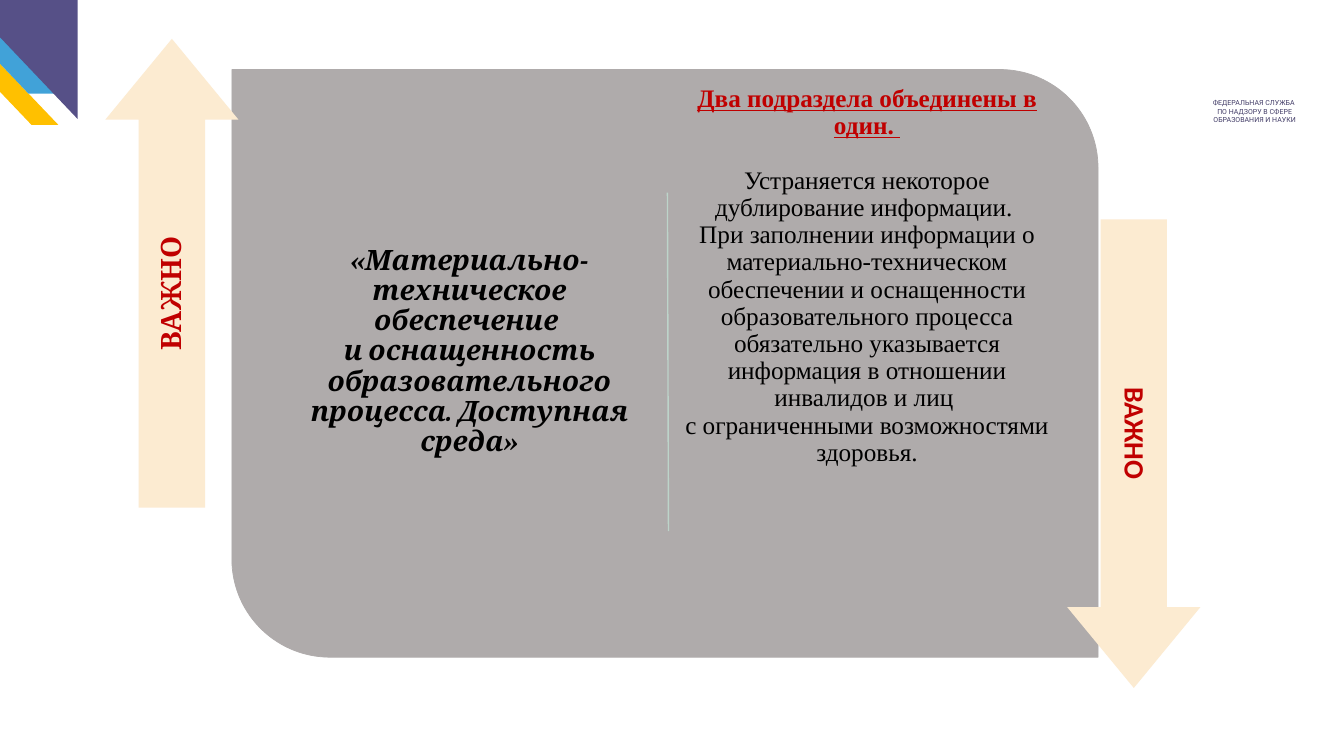
"""Build the slide on the merged subsection between two arrows."""
import pptx
import pptx.util
import pptx.dml.color
import pptx.enum.shapes
import pptx.enum.text
import pptx.oxml.ns
import lxml.etree

Inches = pptx.util.Inches
Pt = pptx.util.Pt
RGBColor = pptx.dml.color.RGBColor
KIND = pptx.enum.shapes.MSO_SHAPE
ANCHOR = pptx.enum.text.MSO_ANCHOR

GOLD = RGBColor(0xFF, 0xC0, 0x00)
SKY = RGBColor(0x41, 0xA2, 0xD8)
PLUM = RGBColor(0x56, 0x50, 0x87)
INK = RGBColor(0x41, 0x3B, 0x66)
GREY = RGBColor(0xAF, 0xAB, 0xAB)
MINT = RGBColor(0xBD, 0xD4, 0xCA)
CREAM = RGBColor(0xFC, 0xEB, 0xD1)
RED = RGBColor(0xC0, 0x00, 0x00)
BLACK = RGBColor(0x00, 0x00, 0x00)


def add_form(slide, kind, spot, fill, adjust=(), flip=(), turn=0):
    """Add a filled preset shape without a line."""
    form = slide.shapes.add_shape(kind, *map(Inches, spot))
    form.shadow.inherit = False
    form.fill.solid()
    form.fill.fore_color.rgb = fill
    form.line.fill.background()
    form.rotation = turn
    for index, value in enumerate(adjust):
        form.adjustments[index] = value
    for side in flip:
        form._element.spPr.find(pptx.oxml.ns.qn("a:xfrm")).set(side, "1")
    return form


def add_rule(slide, start, end, color):
    """Add a thin straight line."""
    rule = slide.shapes.add_connector(
        pptx.enum.shapes.MSO_CONNECTOR.STRAIGHT, *map(Inches, start + end))
    rule.line.color.rgb = color
    rule.line.width = Pt(1)
    lxml.etree.SubElement(rule._element.spPr, pptx.oxml.ns.qn("a:effectLst"))


def add_box(slide, spot, turn=0):
    """Add an empty text box."""
    box = slide.shapes.add_textbox(*map(Inches, spot))
    box.rotation = turn
    return box


def set_frame(box, inset=None, anchor=ANCHOR.TOP):
    """Set wrapping, insets and anchor of a text frame."""
    frame = box.text_frame
    frame.word_wrap = True
    frame.auto_size = pptx.enum.text.MSO_AUTO_SIZE.NONE
    frame.vertical_anchor = anchor
    if inset is not None:
        frame.margin_left = frame.margin_right = Inches(inset)
        frame.margin_top = frame.margin_bottom = Inches(inset)
    return frame


def add_text(para, lines, face, size, color, bold=False, slant=False,
             under=False, space=0.9):
    """Add centred lines to a paragraph, one run each."""
    para.alignment = pptx.enum.text.PP_ALIGN.CENTER
    para.line_spacing = space
    for index, line in enumerate(lines):
        if index:
            para.add_line_break()
        run = para.add_run()
        run.text = line
        font = run.font
        font.name, font.size = face, Pt(size)
        font.bold, font.italic, font.underline = bold, slant, under
        font.color.rgb = color


def add_corner(slide):
    """Add the coloured bands in the top left corner."""
    for left, top, color in ((-0.83, 0.04, GOLD), (-0.86, -0.27, SKY)):
        add_form(slide, KIND.PARALLELOGRAM, (left, top, 1.41, 1.2), color,
                 (0.953,), ("flipH",))
    add_form(slide, KIND.RIGHT_TRIANGLE, (-0.36, -0.01, 1.13, 1.19), PLUM,
             flip=("flipH", "flipV"))


def add_agency(slide):
    """Add the small agency caption."""
    frame = set_frame(add_box(slide, (11.77, 0.93, 1.35, 0.35)))
    add_text(frame.paragraphs[0], ["ФЕДЕРАЛЬНАЯ СЛУЖБА "],
             "Roboto", 5, INK, space=1)
    add_text(frame.add_paragraph(), ["ПО НАДЗОРУ В СФЕРЕ ОБРАЗОВАНИЯ И НАУКИ"],
             "Roboto", 5, INK, space=1)


def add_title(slide):
    """Move the title placeholder onto the panel and fill it."""
    title = slide.shapes.title
    slide.shapes._spTree.append(title._element)
    title.left, title.top = Inches(2.94), Inches(2.36)
    title.width, title.height = Inches(3.43), Inches(2.3)
    add_text(set_frame(title, 0.08).paragraphs[0],
             ["«Материально-техническое обеспечение ",
              "и оснащенность образовательного процесса. Доступная среда»"],
             "Cambria", 20, BLACK, bold=True, slant=True)


def add_notice(slide):
    """Add the explanation on the right half of the panel."""
    frame = set_frame(add_box(slide, (6.67, 0.78, 3.86, 4)), 0.07)
    add_text(frame.paragraphs[0], ["Два подраздела объединены в один. "],
             "Times New Roman", 18, RED, bold=True, under=True)
    detail = frame.add_paragraph()
    detail.space_before = Pt(19.5)
    add_text(detail,
             ["Устраняется некоторое дублирование информации. ",
              "При заполнении информации о материально-техническом "
              "обеспечении и оснащенности образовательного процесса "
              "обязательно указывается информация в отношении "
              "инвалидов и лиц ",
              "с ограниченными возможностями здоровья."],
             "Times New Roman", 18, BLACK)


def add_arrow(slide, spot, label, turn, face):
    """Add a turned arrow with its label."""
    add_form(slide, KIND.RIGHT_ARROW, spot + (4.65, 1.32), CREAM,
             (0.498, 0.607), turn=turn)
    box = add_box(slide, label + (4.25, 0.66), turn)
    add_text(set_frame(box, 0.08, ANCHOR.MIDDLE).paragraphs[0], ["ВАЖНО"],
             face, 20, RED, bold=True)


def main():
    """Build and save the deck."""
    deck = pptx.Presentation()
    deck.slide_width, deck.slide_height = Inches(13.33), Inches(7.5)
    slide = deck.slides.add_slide(deck.slide_layouts[5])
    add_corner(slide)
    add_agency(slide)
    panel = add_form(slide, KIND.ROUND_2_DIAG_RECTANGLE,
                     (2.3, 0.69, 8.59, 5.83), GREY, (0, 0.167))
    panel.line.color.rgb = GREY
    panel.line.width = Pt(0.5)
    add_rule(slide, (6.62, 1.91), (6.63, 5.27), MINT)
    add_title(slide)
    add_notice(slide)
    add_arrow(slide, (-0.62, 2.05), (-0.42, 2.58), 270, "Cambria")
    add_arrow(slide, (8.92, 3.84), (9.12, 3.97), 90, "Calibri")
    deck.save("out.pptx")


if __name__ == "__main__":
    main()
